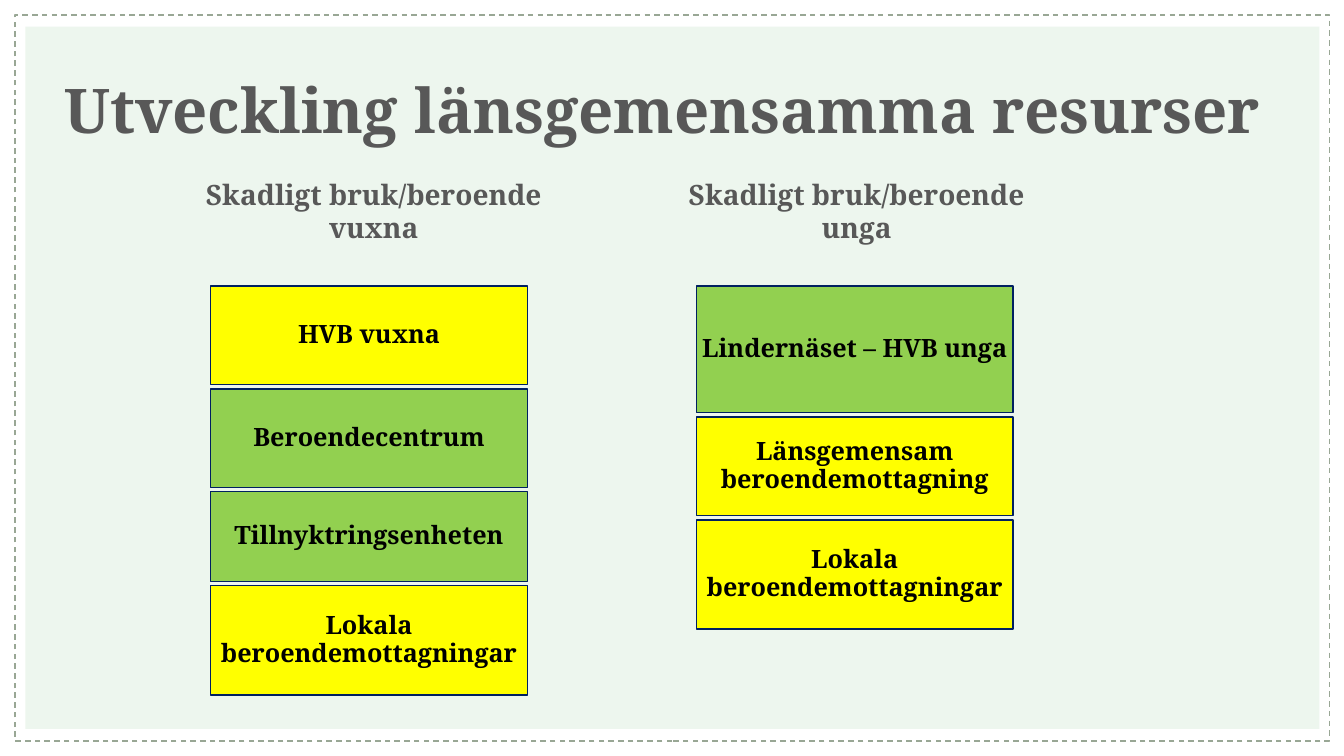
from pptx import Presentation
from pptx.dml.color import RGBColor
from pptx.enum.dml import MSO_LINE
from pptx.enum.shapes import MSO_SHAPE
from pptx.enum.text import MSO_ANCHOR, MSO_AUTO_SIZE, PP_ALIGN
from pptx.util import Cm, Pt

RECT = MSO_SHAPE.RECTANGLE
DASH = MSO_LINE.DASH
TOP, MIDDLE = MSO_ANCHOR.TOP, MSO_ANCHOR.MIDDLE
LEFT, CENTER = PP_ALIGN.LEFT, PP_ALIGN.CENTER
FIXED = MSO_AUTO_SIZE.NONE

MINT = RGBColor(0xED, 0xF6, 0xEE)
SAGE = RGBColor(0x99, 0xA7, 0x95)
GREY = RGBColor(0x58, 0x58, 0x58)
NAVY = RGBColor(0x00, 0x20, 0x60)
GREEN = RGBColor(0x92, 0xD0, 0x50)
YELLOW = RGBColor(0xFF, 0xFF, 0x00)
BLACK = RGBColor(0x00, 0x00, 0x00)


def write(shape, text, size, color=GREY, align=CENTER, anchor=MIDDLE,
          spacing=0.9, inset=None):
    frame = shape.text_frame
    frame.word_wrap = True
    frame.auto_size = FIXED
    frame.vertical_anchor = anchor
    if inset is not None:
        frame.margin_left = frame.margin_right = Cm(inset)
        frame.margin_top = frame.margin_bottom = Cm(inset)
    para = frame.paragraphs[0]
    para.alignment = align
    para.line_spacing = spacing
    run = para.add_run()
    run.text = text
    run.font.name = "Noto Serif"
    run.font.size = Pt(size)
    run.font.bold = True
    run.font.color.rgb = color


def add_box(left, top, width, height, fill=None, line=None):
    box = shapes.add_shape(RECT, Cm(left), Cm(top), Cm(width), Cm(height))
    box.shadow.inherit = False
    if fill is None:
        box.fill.background()
    else:
        box.fill.solid()
        box.fill.fore_color.rgb = fill
    if line is None:
        box.line.fill.background()
    else:
        box.line.color.rgb = line
        box.line.width = Pt(1)
    return box


deck = Presentation()
deck.slide_width, deck.slide_height = Cm(33.87), Cm(19.05)
slide = deck.slides.add_slide(deck.slide_layouts[5])
shapes = slide.shapes

# Background panel and dashed frame
add_box(0.64, 0.67, 32.61, 17.7, fill=MINT)
border = add_box(0.38, 0.38, 33.12, 18.29, line=SAGE)
border.line.dash_style = DASH

# Title, brought in front of the panel
title = shapes.title
title.left, title.top = Cm(1.37), Cm(1.02)
title.width, title.height = Cm(31.17), Cm(3.68)
write(title, "Utveckling länsgemensamma resurser", 44, align=LEFT)
shapes.element.append(title.element)

# Two stacks of resources: heading place, box place, (text, height, fill)
GAP = 0.11
stacks = [
    ("Skadligt bruk/beroende vuxna", 4.19, 10.46, 5.31, [
        ("HVB vuxna", 2.48, YELLOW),
        ("Beroendecentrum", 2.48, GREEN),
        ("Tillnyktringsenheten", 2.26, GREEN),
        ("Lokala beroendemottagningar", 2.75, YELLOW),
    ]),
    ("Skadligt bruk/beroende unga", 16.94, 9.3, 17.55, [
        ("Lindernäset – HVB unga", 3.19, GREEN),
        ("Länsgemensam beroendemottagning", 2.48, YELLOW),
        ("Lokala beroendemottagningar", 2.75, YELLOW),
    ]),
]
for head, x, width, left, units in stacks:
    label = shapes.add_textbox(Cm(x), Cm(4.34), Cm(width), Cm(1.96))
    write(label, head, 20, anchor=TOP, spacing=1.0)
    top = 7.21
    for text, height, fill in units:
        box = add_box(left, top, 7.98, height, fill=fill, line=NAVY)
        write(box, text, 18, color=BLACK, inset=0.08)
        top += height + GAP

deck.save("out.pptx")
